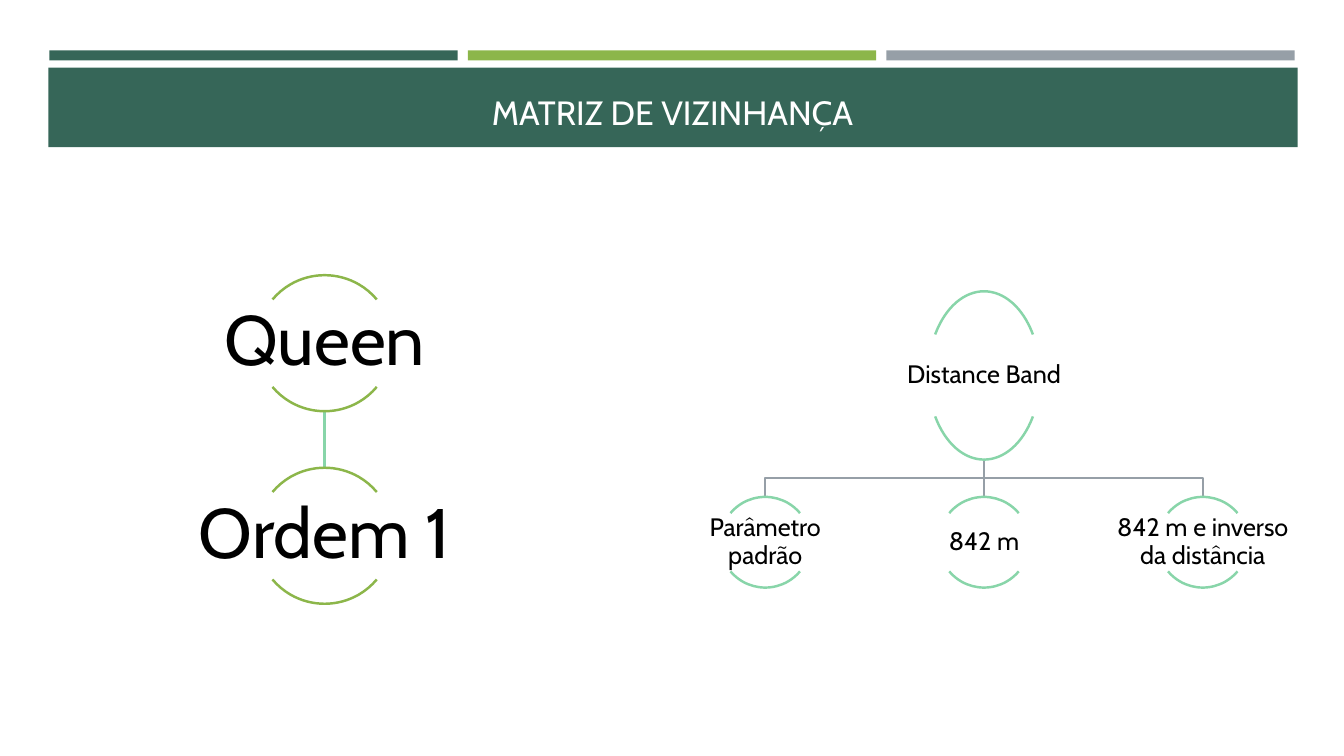
"""Builds the neighbourhood matrix slide with its two hierarchy diagrams."""
import pptx
import pptx.dml.color
import pptx.enum.shapes
import pptx.enum.text
import pptx.oxml.ns
import pptx.util
from lxml import etree

Inches = pptx.util.Inches
COLORS = {
    "dark": "366658",
    "lime": "8CB64A",
    "gray": "969FA7",
    "mint": "88D5A9",
    "white": "FFFFFF",
    "black": "000000",
}


class SlideBuilder:
    """Holds the style and the current slide."""

    font_name = "Cabin"
    line_width = pptx.util.Pt(1.75)
    arc_angles = ((132, 192), (24, 84))

    def __init__(self, slide):
        self.slide = slide

    def color(self, name):
        """Return the named colour."""
        return pptx.dml.color.RGBColor.from_string(COLORS[name])

    def stroke(self, shape, color):
        """Apply the diagram line style."""
        shape.line.color.rgb = self.color(color)
        shape.line.width = self.line_width

    def bar(self, left, top, width, height, color):
        """Add a filled rectangle."""
        shape = self.slide.shapes.add_shape(
            pptx.enum.shapes.MSO_SHAPE.RECTANGLE,
            Inches(left), Inches(top), Inches(width), Inches(height))
        shape.shadow.inherit = False
        shape.fill.solid()
        shape.fill.fore_color.rgb = self.color(color)
        shape.line.fill.background()

    def text(self, left, top, width, height, words, size, color="black",
             anchor="MIDDLE", inset=None, spacing=None):
        """Add a centred text box."""
        box = self.slide.shapes.add_textbox(
            Inches(left), Inches(top), Inches(width), Inches(height))
        frame = box.text_frame
        frame.word_wrap = True
        frame.vertical_anchor = pptx.enum.text.MSO_ANCHOR[anchor]
        if inset is not None:
            frame.margin_left = frame.margin_right = Inches(inset)
            frame.margin_top = frame.margin_bottom = Inches(inset)
        frame.text = words
        paragraph = frame.paragraphs[0]
        paragraph.alignment = pptx.enum.text.PP_ALIGN.CENTER
        paragraph.line_spacing = spacing
        font = paragraph.runs[0].font
        font.name = self.font_name
        font.size = pptx.util.Pt(size)
        font.color.rgb = self.color(color)

    def straight(self, x, top, bottom, color):
        """Add a vertical connector."""
        connector = self.slide.shapes.add_connector(
            pptx.enum.shapes.MSO_CONNECTOR.STRAIGHT,
            Inches(x), Inches(top), Inches(x), Inches(bottom))
        self.stroke(connector, color)
        properties = connector._element.spPr
        etree.SubElement(properties, pptx.oxml.ns.qn("a:effectLst"))

    def branch(self, start_x, end_x, top, bottom, color):
        """Add an open elbow line from a parent to a child."""
        middle = (top + bottom) / 2
        points = [(start_x, middle), (end_x, middle), (end_x, bottom)]
        builder = self.slide.shapes.build_freeform(Inches(start_x), Inches(top))
        builder.add_line_segments(
            [(Inches(x), Inches(y)) for x, y in points], close=False)
        shape = builder.convert_to_shape()
        shape.shadow.inherit = False
        shape.fill.background()
        self.stroke(shape, color)

    def node(self, center, top, width, height, words, size, color, inset):
        """Add a label between an upper and a lower arc."""
        for angles in self.arc_angles:
            arc = self.slide.shapes.add_shape(
                pptx.enum.shapes.MSO_SHAPE.ARC, Inches(center - width / 2),
                Inches(top), Inches(width), Inches(height))
            arc.adjustments[0], arc.adjustments[1] = angles
            arc.shadow.inherit = False
            arc.fill.background()
            self.stroke(arc, color)
        self.text(center - width, top + 0.18 * height, 2 * width, 0.64 * height,
                  words, size, inset=inset, spacing=0.9)


def main():
    """Build and save the presentation."""
    presentation = pptx.Presentation()
    presentation.slide_width = Inches(13.33)
    presentation.slide_height = Inches(7.5)
    slide = presentation.slides.add_slide(presentation.slide_layouts[6])
    builder = SlideBuilder(slide)

    for index, color in enumerate(("dark", "lime", "gray")):
        builder.bar(0.49 + 4.15 * index, 0.5, 4.05, 0.1, color)
    builder.bar(0.48, 0.67, 12.39, 0.79, "dark")
    builder.text(0.64, 0.77, 12.06, 0.59, "MATRIZ DE VIZINHANÇA", 24,
                 color="white", anchor="BOTTOM")

    queen_center = 3.22
    builder.straight(queen_center, 4.08, 4.64, "mint")
    for top, words in ((2.73, "Queen"), (4.64, "Ordem 1")):
        builder.node(queen_center, top, 1.35, 1.35, words, 50, "lime", 0.03)

    band_center, band_gap = 9.76, 2.17
    band_bottom, child_top = 4.55, 4.93
    children = {
        band_center - band_gap: "Parâmetro padrão",
        band_center: "842 m",
        band_center + band_gap: "842 m e inverso da distância",
    }
    for center in children:
        if center == band_center:
            builder.straight(center, band_bottom, child_top, "gray")
        else:
            builder.branch(band_center, center, band_bottom, child_top, "gray")
    builder.node(band_center, 2.89, 1.11, 1.67, "Distance Band", 18, "mint", 0.01)
    for center, words in children.items():
        builder.node(center, child_top, 0.9, 0.9, words, 18, "mint", 0.01)

    presentation.save("out.pptx")


if __name__ == "__main__":
    main()
